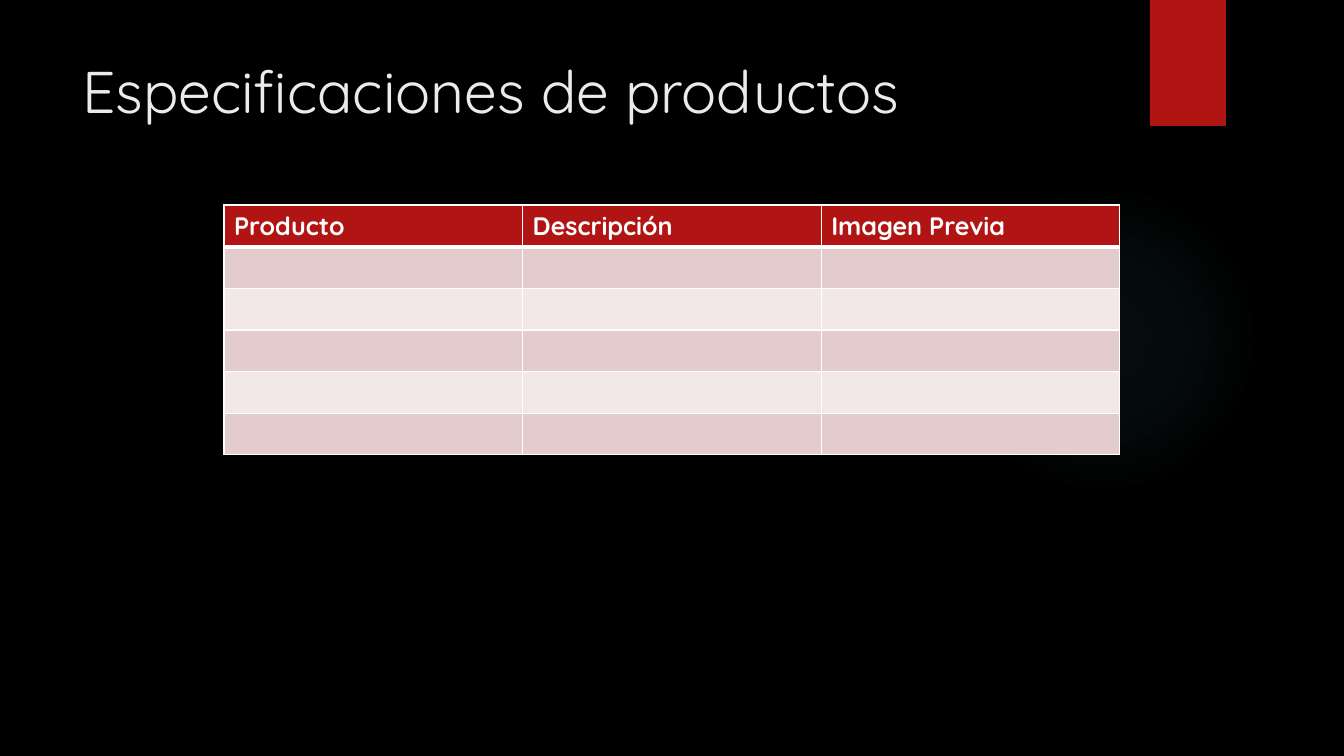
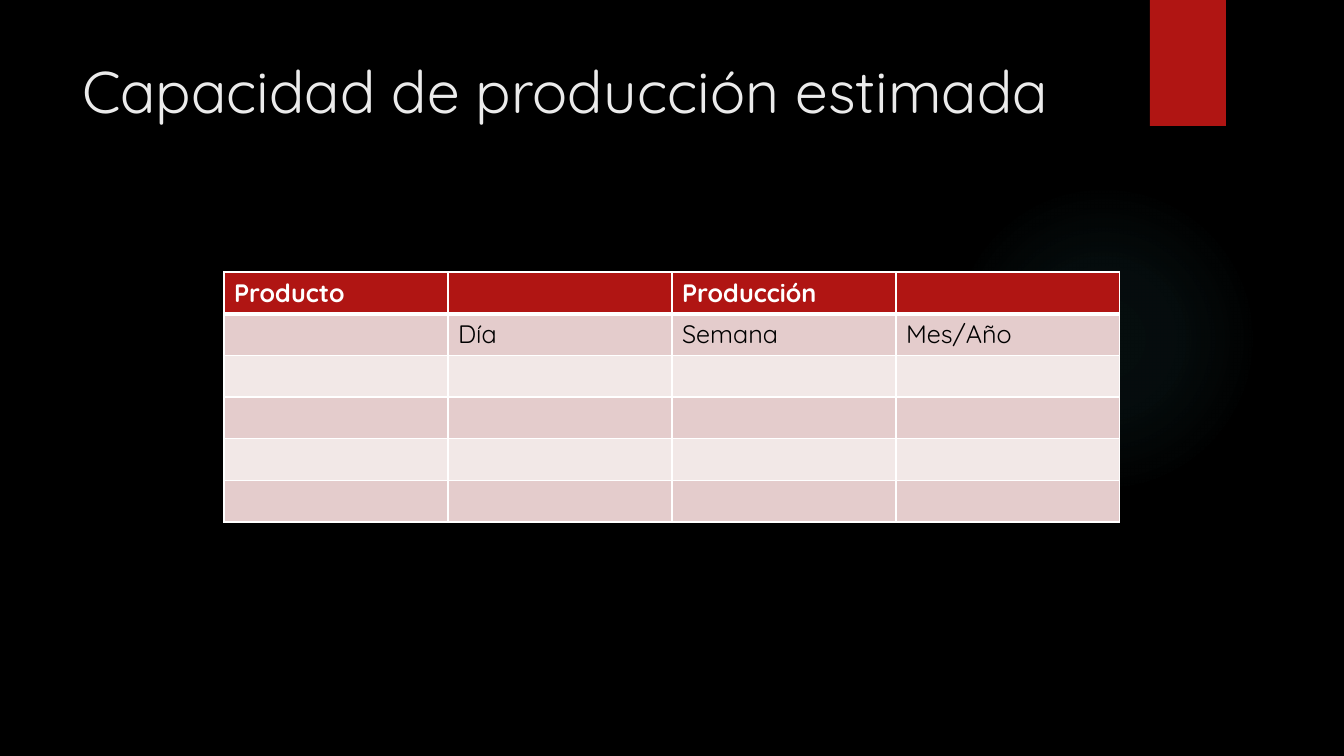
from lxml import etree
from pptx import Presentation
from pptx.dml.color import RGBColor
from pptx.enum.shapes import MSO_SHAPE
from pptx.enum.text import MSO_ANCHOR, PP_ALIGN
from pptx.oxml import parse_xml
from pptx.oxml.ns import nsdecls, qn
from pptx.util import Pt

RECT, OVAL = MSO_SHAPE.RECTANGLE, MSO_SHAPE.OVAL
TOP, LEFT = MSO_ANCHOR.TOP, PP_ALIGN.LEFT

PX = 12192000 / 1344
FONT = "Quicksand"
COLORS = {
    "background": "000000",
    "title": "EBEBEB",
    "red": "B01513",
    "glow": "50B9C1",
    "band_dark": "E4CCCC",
    "band_light": "F2E8E7",
    "white": "FFFFFF",
    "black": "000000",
}
GLOW_STOPS = [(0, 7), (36, 6), (69, 0)]  # position and opacity, in percent
TABLE_LEFT, TABLE_WIDTH, TABLE_HEIGHT = 224, 896, 250
ROWS = 6

SLIDES = [
    ("Especificaciones de productos", 205,
     [["Producto", "Descripción", "Imagen Previa"]]),
    ("Capacidad de producción estimada", 272,
     [["Producto", "", "Producción", ""],
      ["", "Día", "Semana", "Mes/Año"]]),
]


def px(*lengths):
    return [round(n * PX) for n in lengths]


def set_border(cell, sides):
    """Draw white cell borders; sides maps L, R, T, B (in that order) to points."""
    tcPr = cell._tc.get_or_add_tcPr()
    for side, width in sides.items():
        ln = etree.SubElement(tcPr, qn(f"a:ln{side}"), w=str(Pt(width)))
        fill = etree.SubElement(ln, qn("a:solidFill"))
        etree.SubElement(fill, qn("a:srgbClr"), val=COLORS["white"])


prs = Presentation()
prs.slide_width, prs.slide_height = px(1344, 756)
fill = prs.slide_master.background.fill
fill.solid()
fill.fore_color.rgb = RGBColor.from_string(COLORS["background"])

stops = "".join(
    f'<a:gs pos="{pos * 1000}"><a:srgbClr val="{COLORS["glow"]}">'
    f'<a:alpha val="{alpha * 1000}"/></a:srgbClr></a:gs>'
    for pos, alpha in GLOW_STOPS)
glow_xml = (
    f'<a:gradFill {nsdecls("a")}><a:gsLst>{stops}</a:gsLst><a:path path="circle">'
    '<a:fillToRect l="50000" t="50000" r="50000" b="50000"/></a:path></a:gradFill>')

for title, table_top, texts in SLIDES:
    s = prs.slides.add_slide(prs.slide_layouts[5])

    glow = s.shapes.add_shape(OVAL, *px(949, 184, 310, 310))
    glow.fill.background()
    spPr = glow._element.spPr
    spPr.replace(spPr.find(qn("a:noFill")), parse_xml(glow_xml))
    ribbon = s.shapes.add_shape(RECT, *px(1150, 0, 76, 126))
    ribbon.fill.solid()
    ribbon.fill.fore_color.rgb = RGBColor.from_string(COLORS["red"])
    for sp in (glow, ribbon):
        sp.line.fill.background()
        sp.shadow.inherit = False

    sp = s.shapes.title
    sp.left, sp.top, sp.width, sp.height = px(72, 50, 1037, 154)
    tf = sp.text_frame
    tf.text = title
    tf.vertical_anchor = TOP
    p = tf.paragraphs[0]
    p.alignment = LEFT
    font = p.runs[0].font
    font.name, font.size = FONT, Pt(42)
    font.color.rgb = RGBColor.from_string(COLORS["title"])

    cols = len(texts[0])
    table = s.shapes.add_table(
        ROWS, cols, *px(TABLE_LEFT, table_top, TABLE_WIDTH, TABLE_HEIGHT)).table
    for column in table.columns:
        column.width = round(TABLE_WIDTH * PX / cols)
    for i, row in enumerate(table.rows):
        row.height = round(TABLE_HEIGHT * PX / ROWS)
        header = i == 0
        band = "red" if header else "band_dark" if i % 2 else "band_light"
        for j, cell in enumerate(row.cells):
            set_border(cell, {"L": 1, "R": 1, "T": 3 if i == 1 else 1,
                              "B": 3 if header else 1})
            cell.fill.solid()
            cell.fill.fore_color.rgb = RGBColor.from_string(COLORS[band])
            if i < len(texts) and texts[i][j]:
                p = cell.text_frame.paragraphs[0]
                p.text = texts[i][j]
                font = p.runs[0].font
                font.name, font.size, font.bold = FONT, Pt(18), header
                font.color.rgb = RGBColor.from_string(
                    COLORS["white" if header else "black"])

prs.save("out.pptx")
